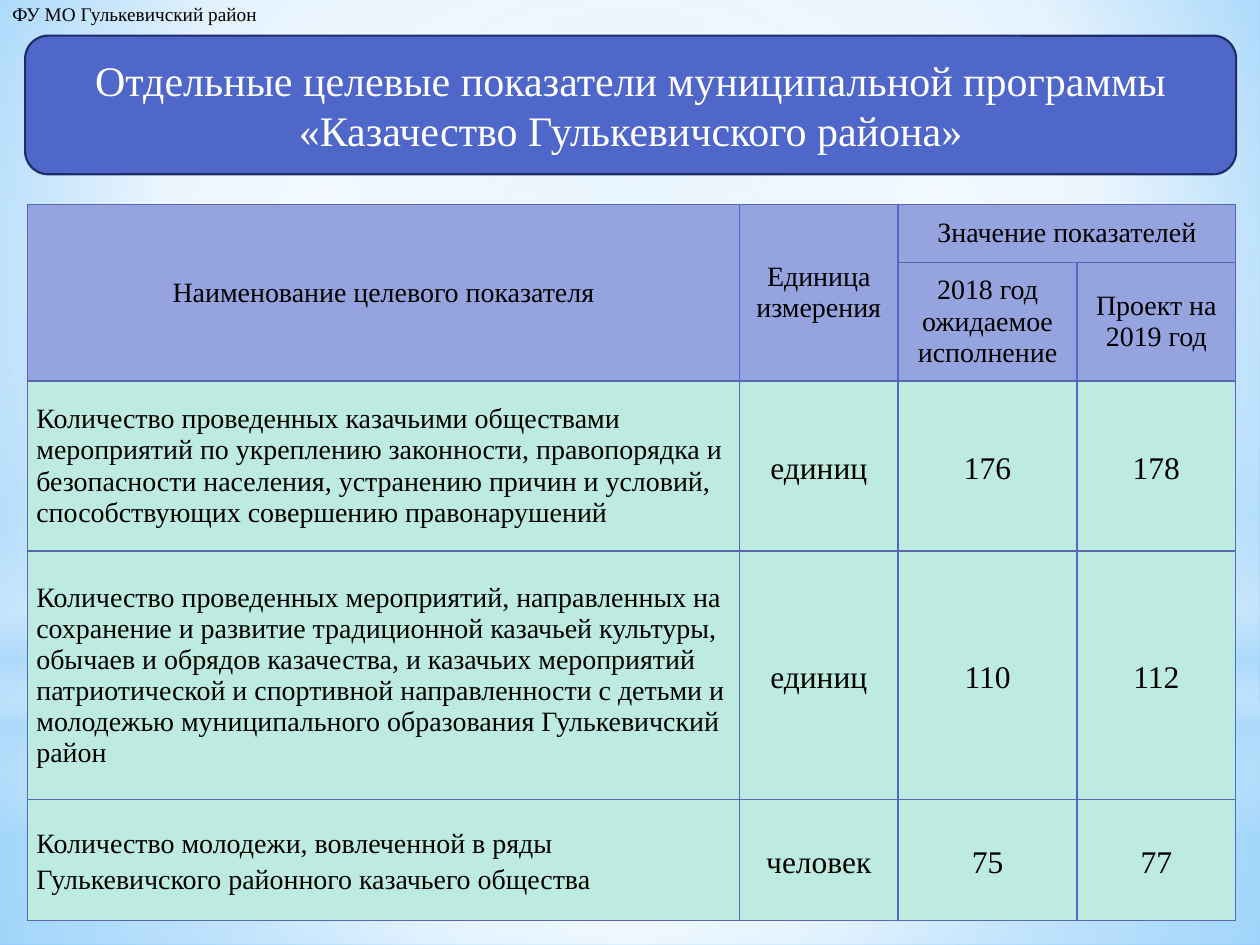
from dataclasses import dataclass

from lxml import etree
from pptx import Presentation
from pptx.dml.color import RGBColor
from pptx.enum import shapes, text
from pptx.oxml import ns
from pptx.util import Pt


@dataclass(frozen=True)
class Theme:
    """Colours, type sizes and the font of the slide."""
    font: str = "Times New Roman"
    ink: str = "000000"
    white: str = "FFFFFF"
    sky: str = "B4DCFA"
    banner: str = "4E67C8"
    banner_edge: str = "1F2E69"
    header: str = "95A4DE"
    body: str = "BEEBDF"
    rule: str = "5968B0"
    small: int = 11
    label: int = 16
    value: int = 18
    title: int = 24


THEME = Theme()
CENTER, LEFT = text.PP_ALIGN.CENTER, text.PP_ALIGN.LEFT
MIDDLE = text.MSO_ANCHOR.MIDDLE
PAGE = (720, 540)
COLUMNS = (406.8, 90.7, 102.2, 90.7)
ROWS = (33.1, 67.7, 97.2, 141.8, 69.1)
HEADERS = {
    (0, 0): "Наименование целевого показателя",
    (0, 1): "Единица\nизмерения",
    (0, 2): "Значение показателей",
    (1, 2): "2018 год ожидаемое исполнение",
    (1, 3): "Проект на 2019 год",
}
MERGES = (((0, 0), (1, 0)), ((0, 1), (1, 1)), ((0, 2), (0, 3)))
INDICATORS = (
    ("Количество проведенных казачьими обществами мероприятий по укреплению "
     "законности, правопорядка и безопасности населения, устранению причин и "
     "условий, способствующих совершению правонарушений", "единиц", "176", "178"),
    ("Количество проведенных мероприятий, направленных на сохранение и развитие "
     "традиционной казачьей культуры, обычаев и обрядов казачества, и казачьих "
     "мероприятий патриотической и спортивной направленности с детьми и молодежью "
     "муниципального образования Гулькевичский район", "единиц", "110", "112"),
    ("Количество молодежи, вовлеченной в ряды Гулькевичского районного казачьего "
     "общества", "человек", "75", "77"),
)
GLOWS = (
    ("RECTANGLE", (0, 401.8, 720, 138.2), (50, 50, 50, 50),
     ((0, THEME.white, 91), (37, THEME.white, 76), (100, THEME.sky, 79))),
    ("RECTANGLE", (0, 0, 720, 401.8), (50, 50, 50, 50),
     ((0, THEME.white, 89), (48, THEME.white, 62), (100, THEME.sky, 79))),
    ("RECTANGLE", (0, 296.6, 720, 180), None,
     ((0, THEME.white, 0), (29, THEME.white, 30), (45, THEME.sky, 40),
      (55, THEME.white, 26), (65, THEME.sky, 60), (100, THEME.white, 0))),
    ("OVAL", (0, 126, 720, 401.8), (50, 50, 50, 50),
     ((0, THEME.white, 100), (56, THEME.white, 0))),
)


def assign(target, values):
    """Set each attribute of the target from a dict of format values."""
    for name, value in values.items():
        setattr(target, name, value)


def add_node(parent, tag, **attributes):
    """Append a DrawingML element and return it."""
    node = etree.SubElement(parent, ns.qn(f"a:{tag}"))
    for name, value in attributes.items():
        node.set(name, str(value))
    return node


def paint_gradient(fill, owner, stops, focus):
    """Fill the owner with a circular gradient, or a vertical one without focus."""
    fill.gradient()
    gradient = next(owner.iter(ns.qn("a:gradFill")))
    for child in list(gradient):
        gradient.remove(child)
    stop_list = add_node(gradient, "gsLst")
    for position, color, opacity in stops:
        stop = add_node(stop_list, "gs", pos=position * 1000)
        shade = add_node(stop, "srgbClr", val=color)
        add_node(shade, "alpha", val=opacity * 1000)
    if focus:
        circle = add_node(gradient, "path", path="circle")
        add_node(circle, "fillToRect", **{side: inset * 1000 for side, inset in zip("ltrb", focus)})
    else:
        add_node(gradient, "lin", ang=90 * 60000, scaled=0)


def write(frame, wording, size, color=THEME.ink, **paragraph_format):
    """Write the wording into a text frame, one paragraph a line."""
    frame.text = wording
    for paragraph in frame.paragraphs:
        assign(paragraph, paragraph_format)
        for run in paragraph.runs:
            assign(run.font, {"name": THEME.font, "size": Pt(size)})
            run.font.color.rgb = RGBColor.from_string(color)


def add_panel(slide, kind, box):
    """Place a shadowless preset shape in the box."""
    panel = slide.shapes.add_shape(getattr(shapes.MSO_SHAPE, kind), *map(Pt, box))
    panel.shadow.inherit = False
    return panel


def add_backdrop(slide, box):
    """Paint the sky background and its glows, scaled to the box."""
    paint_gradient(slide.background.fill, slide.element,
                   ((0, "9ED5FF", 100), (60, THEME.white, 100), (100, "5BB9FF", 100)),
                   (20, 10, 20, 60))
    left, top, width, height = box
    across, down = width / PAGE[0], height / PAGE[1]
    for kind, (x, y, w, h), focus, stops in GLOWS:
        glow = add_panel(slide, kind, (left + x * across, top + y * down, w * across, h * down))
        glow.line.fill.background()
        paint_gradient(glow.fill, glow.element, stops, focus)


def add_department(slide, box):
    """Place the department name in the corner."""
    frame = slide.shapes.add_textbox(*map(Pt, box)).text_frame
    assign(frame, {"word_wrap": False, "auto_size": text.MSO_AUTO_SIZE.SHAPE_TO_FIT_TEXT})
    write(frame, "ФУ МО Гулькевичский район", THEME.small)


def add_banner(slide, box):
    """Place the title in a rounded banner."""
    banner = add_panel(slide, "ROUNDED_RECTANGLE", box)
    banner.fill.solid()
    banner.fill.fore_color.rgb = RGBColor.from_string(THEME.banner)
    banner.line.color.rgb = RGBColor.from_string(THEME.banner_edge)
    banner.line.width = Pt(1.25)
    assign(banner.text_frame, {"word_wrap": True, "vertical_anchor": MIDDLE})
    write(banner.text_frame,
          "Отдельные целевые показатели муниципальной программы «Казачество Гулькевичского района»",
          THEME.title, THEME.white, alignment=CENTER)


def style_cell(cell, column, color):
    """Rule and fill a table cell."""
    edges = {"lnL": THEME.banner if column else THEME.rule, "lnR": THEME.banner,
             "lnT": THEME.rule, "lnB": THEME.rule}
    cell.vertical_anchor = MIDDLE
    properties = cell._tc.get_or_add_tcPr()
    for edge, edge_color in edges.items():
        line = add_node(properties, edge, w=Pt(1))
        add_node(add_node(line, "solidFill"), "srgbClr", val=edge_color)
    cell.fill.solid()
    cell.fill.fore_color.rgb = RGBColor.from_string(color)


def add_indicators(slide, box):
    """Place the table of indicators, with columns and rows scaled to the box."""
    header_rows = len(ROWS) - len(INDICATORS)
    table = slide.shapes.add_table(len(ROWS), len(COLUMNS), *map(Pt, box)).table
    assign(table, {"first_row": False, "horz_banding": False})
    for column, width in zip(table.columns, COLUMNS):
        column.width = Pt(width * box[2] / sum(COLUMNS))
    for row, height in zip(table.rows, ROWS):
        row.height = Pt(height * box[3] / sum(ROWS))
    for start, end in MERGES:
        table.cell(*start).merge(table.cell(*end))
    for row in range(len(ROWS)):
        for column in range(len(COLUMNS)):
            color = THEME.header if row < header_rows else THEME.body
            style_cell(table.cell(row, column), column, color)
    for place, wording in HEADERS.items():
        write(table.cell(*place).text_frame, wording, THEME.label, alignment=CENTER)
    for row, indicator in enumerate(INDICATORS, header_rows):
        for column, wording in enumerate(indicator):
            cell = table.cell(row, column)
            assign(cell, {"margin_left": Pt(5), "margin_right": Pt(5),
                          "margin_top": 0, "margin_bottom": 0})
            spaced = column > 0 or row == len(ROWS) - 1
            write(cell.text_frame, wording, THEME.value if column else THEME.label,
                  alignment=CENTER if column else LEFT,
                  line_spacing=1.15 if spaced else None)


def main():
    """Build the slide and save it."""
    deck = Presentation()
    assign(deck, {"slide_width": Pt(PAGE[0]), "slide_height": Pt(PAGE[1])})
    slide = deck.slides.add_slide(deck.slide_layouts[6])
    add_backdrop(slide, (0, 0, *PAGE))
    add_department(slide, (0, -2.2, 157, 20.9))
    add_indicators(slide, (15.8, 116.8, 690.4, 409.3))
    add_banner(slide, (14.4, 20.4, 692, 79.2))
    deck.save("out.pptx")


if __name__ == "__main__":
    main()
